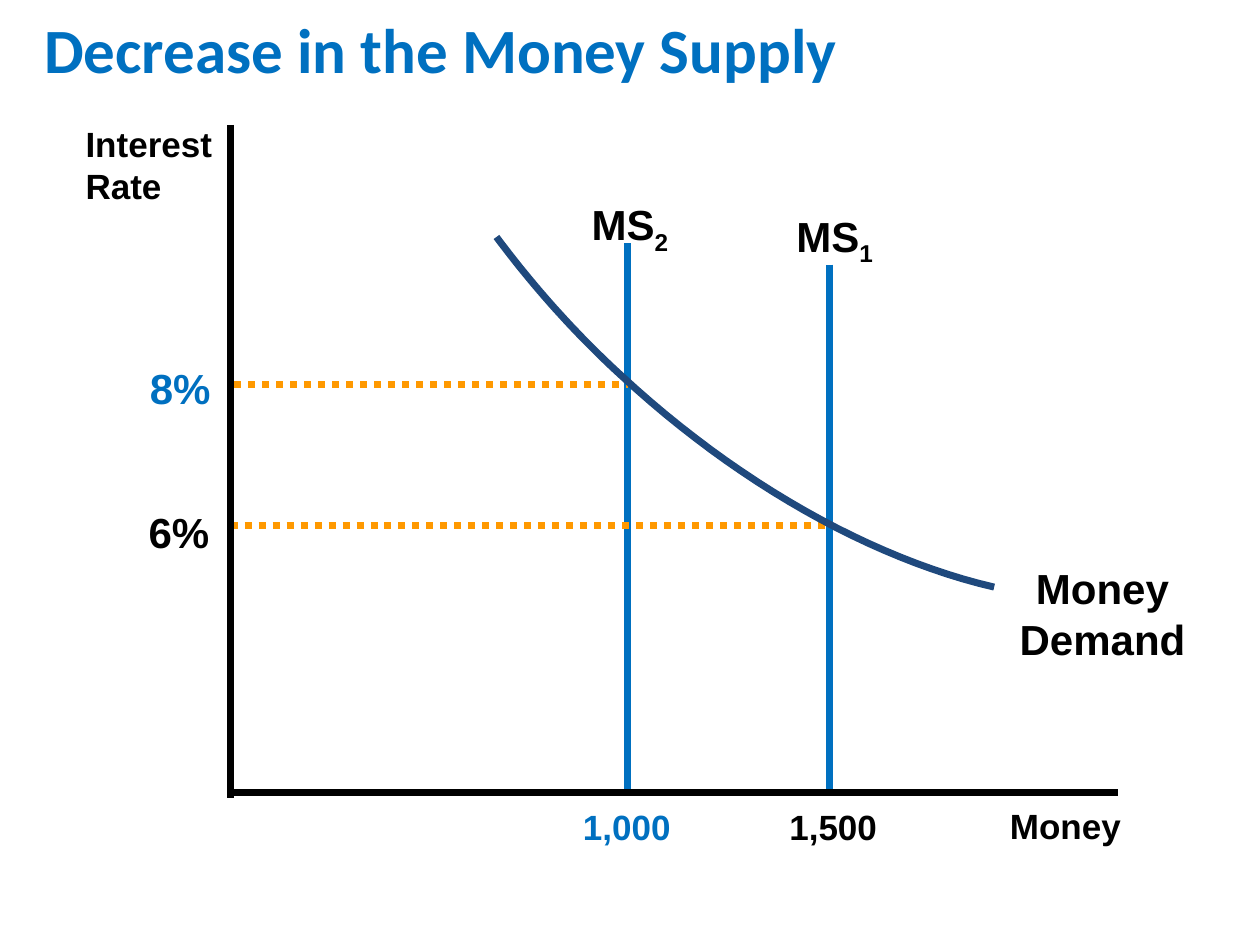
from dataclasses import dataclass
from math import comb

from lxml.etree import SubElement
from pptx import Presentation
from pptx.dml.color import RGBColor
from pptx.enum.dml import MSO_LINE
from pptx.enum.shapes import MSO_CONNECTOR
from pptx.enum.text import MSO_ANCHOR, MSO_AUTO_SIZE, PP_ALIGN
from pptx.oxml.ns import qn
from pptx.util import Pt


@dataclass(frozen=True)
class Theme:
    black: RGBColor = RGBColor(0x00, 0x00, 0x00)
    white: RGBColor = RGBColor(0xFF, 0xFF, 0xFF)
    blue: RGBColor = RGBColor(0x00, 0x70, 0xC0)
    navy: RGBColor = RGBColor(0x1F, 0x49, 0x7D)
    orange: RGBColor = RGBColor(0xFF, 0x99, 0x00)
    title_font: str = "Calibri"
    body_font: str = "Arial"
    title: int = 36
    label: int = 24
    axis: int = 20
    stroke: int = 4


THEME = Theme()
AXIS_X, AXIS_Y = 131.8, 452.9
MS1_X, MS2_X = 473.8, 358.6
RATE_6_Y, RATE_8_Y = 300.2, 219.6
DEMAND = [
    [(568.1, 335.5), (497.5, 319), (421.2, 275.8), (355, 214.6)],
    [(355, 214.6), (328.3, 190.1), (304.6, 163.4), (283.7, 135.4)],
]


def style(p, font, size, color, align):
    p.alignment = align
    p.font.name = font
    p.font.size = Pt(size)
    p.font.bold = True
    p.font.color.rgb = color


def add_title(s, text, x, y, w, h):
    sp = s.shapes.title
    sp.left, sp.top, sp.width, sp.height = Pt(x), Pt(y), Pt(w), Pt(h)
    sp.fill.solid()
    sp.fill.fore_color.rgb = THEME.white
    tf = sp.text_frame
    tf.text = text
    tf.auto_size = MSO_AUTO_SIZE.NONE
    tf.vertical_anchor = MSO_ANCHOR.TOP
    style(tf.paragraphs[0], THEME.title_font, THEME.title, THEME.blue, PP_ALIGN.LEFT)


def add_label(s, text, x, y, w, h, size, color=THEME.black, align=PP_ALIGN.LEFT, sub=None):
    tf = s.shapes.add_textbox(Pt(x), Pt(y), Pt(w), Pt(h)).text_frame
    tf.word_wrap = True
    p = tf.paragraphs[0]
    p.add_run().text = text
    if sub:
        r = p.add_run()
        r.text = sub
        r._r.get_or_add_rPr().set("baseline", "-25000")
    style(p, THEME.body_font, size, color, align)


def add_line(s, x1, y1, x2, y2, color, dash=None):
    sp = s.shapes.add_connector(MSO_CONNECTOR.STRAIGHT, Pt(x1), Pt(y1), Pt(x2), Pt(y2))
    sp.line.color.rgb = color
    sp.line.width = Pt(THEME.stroke)
    if dash:
        sp.line.dash_style = dash
    SubElement(sp._element.spPr, qn("a:effectLst"))


def bezier(points, t):
    n = len(points) - 1
    weights = [comb(n, i) * t**i * (1 - t) ** (n - i) for i in range(n + 1)]
    return tuple(Pt(sum(w * pt[k] for w, pt in zip(weights, points))) for k in (0, 1))


def add_curve(s, segments, color, steps=24):
    start = bezier(segments[0], 0)
    points = [bezier(seg, i / steps) for seg in segments for i in range(1, steps + 1)]
    builder = s.shapes.build_freeform(*start)
    builder.add_line_segments(points, close=False)
    sp = builder.convert_to_shape()
    sp.shadow.inherit = False
    sp.fill.background()
    sp.line.color.rgb = color
    sp.line.width = Pt(THEME.stroke)


def main():
    prs = Presentation()
    prs.slide_width, prs.slide_height = Pt(720), Pt(540)
    s = prs.slides.add_slide(prs.slide_layouts[5])
    center = PP_ALIGN.CENTER

    add_title(s, "Decrease in the Money Supply", 18, 2.2, 546, 51)

    add_label(s, "Money Demand", 570, 318, 120, 60, THEME.label, align=center)
    add_label(s, "1,000", 306, 457, 104.4, 29, THEME.axis, THEME.blue, center)
    add_label(s, "1,500", 444, 457, 78, 29, THEME.axis)
    add_label(s, "MS", 306, 110, 108, 34, THEME.label, align=center, sub="2")
    add_label(s, "MS", 426, 116.6, 102, 34, THEME.label, align=center, sub="1")
    add_label(s, "8%", 78.5, 203.8, 65.5, 34, THEME.label, THEME.blue)
    add_label(s, "6%", 77.8, 285.8, 62, 34, THEME.label)
    add_label(s, "Interest Rate", 41.8, 66.2, 91.4, 51, THEME.axis)
    add_label(s, "Money", 570, 456, 84.2, 29, THEME.axis)

    for x, top in ((MS2_X, 139), (MS1_X, 151.2)):
        add_line(s, x, top, x, 451.4, THEME.blue)
    for left, x, y in ((133.9, MS2_X, RATE_8_Y), (AXIS_X, MS1_X, RATE_6_Y)):
        add_line(s, left, y, x, y, THEME.orange, MSO_LINE.ROUND_DOT)

    add_line(s, AXIS_X, 71.3, AXIS_X, 455.8, THEME.black)
    add_curve(s, DEMAND, THEME.navy)
    add_line(s, 130.3, AXIS_Y, 638.6, AXIS_Y, THEME.black)

    prs.save("out.pptx")


if __name__ == "__main__":
    main()
